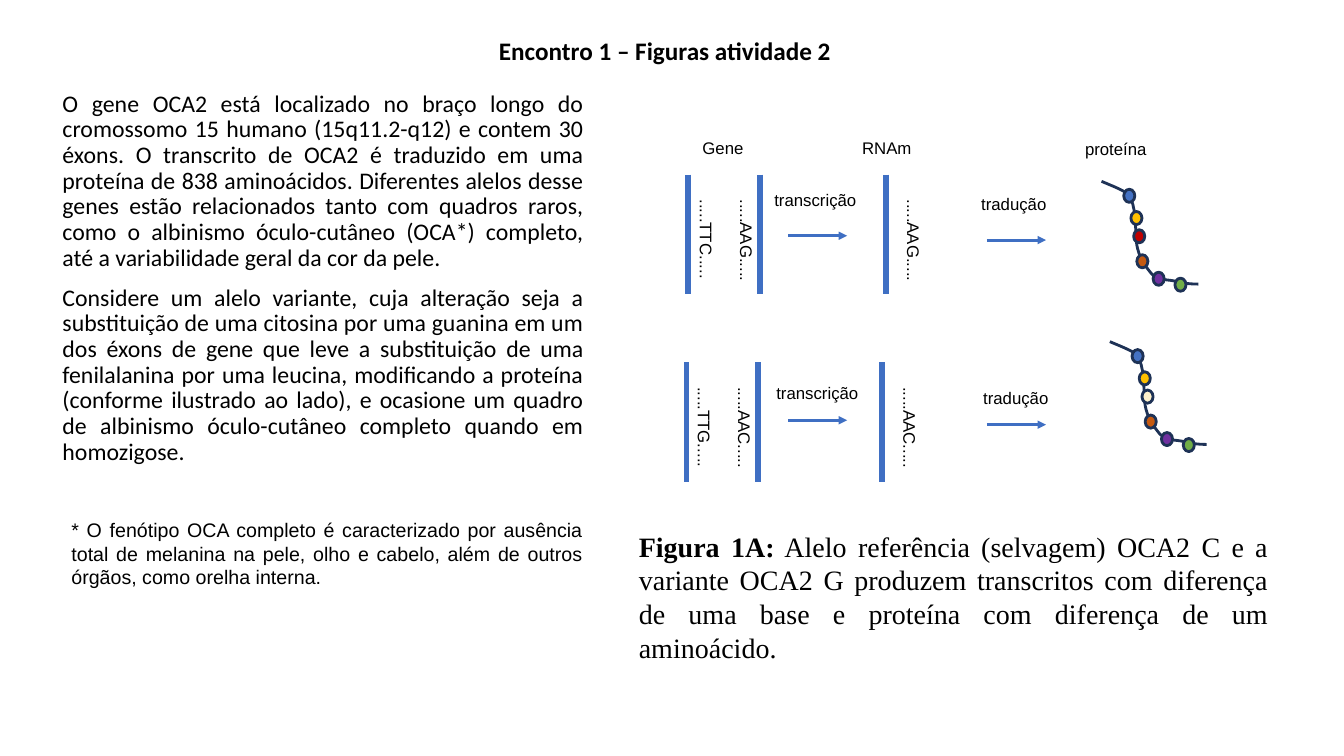
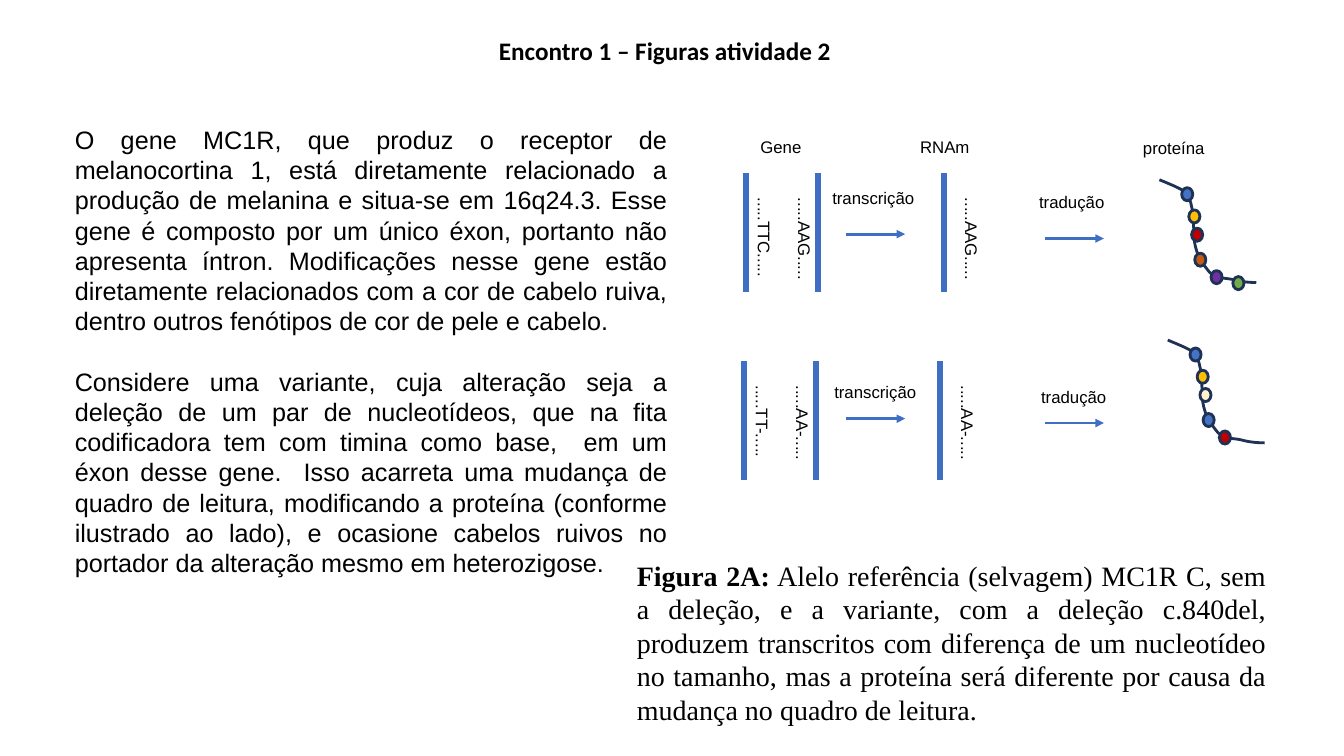
from dataclasses import dataclass

from lxml.etree import SubElement
from pptx import Presentation
from pptx.dml.color import RGBColor
from pptx.enum.shapes import MSO_CONNECTOR as Connector, MSO_SHAPE as Preset
from pptx.enum.text import MSO_ANCHOR as Anchor, MSO_AUTO_SIZE as AutoSize, PP_ALIGN as Align
from pptx.oxml.ns import qn
from pptx.util import Cm, Pt


@dataclass(frozen=True)
class Theme:
    text: str = "000000"
    strand: str = "3F6FC3"
    chain: str = "1E3256"
    blue: str = "4472C4"
    gold: str = "FFC000"
    red: str = "C00000"
    cream: str = "FFF2CC"
    orange: str = "C55A11"
    purple: str = "7030A0"
    green: str = "70AD47"
    sans: str = "Arial"
    heading: str = "Calibri"
    serif: str = "Times New Roman"
    label_size: float = 12
    note_size: float = 14
    gene_size: float = 17
    title_size: float = 18
    caption_size: float = 20
    strand_width: float = 4.25
    thin_width: float = 2


THEME = Theme()

REFERENCE_BEADS = (THEME.blue, THEME.gold, THEME.red, THEME.orange, THEME.purple, THEME.green)
OCA2_BEADS = (THEME.blue, THEME.gold, THEME.cream, THEME.orange, THEME.purple, THEME.green)
MC1R_BEADS = (THEME.blue, THEME.gold, THEME.cream, THEME.blue, THEME.red)
BEAD_SPOTS = ((0.56, 0.2), (0.74, 0.76), (0.81, 1.22), (0.89, 1.85), (1.3, 2.29), (1.85, 2.44))
CHAIN_CURVES = (
    ((0.18, 0.08), (0.33, 0.13), (0.56, 0.25)),
    ((0.66, 0.33), (0.74, 0.43), (0.79, 0.58)),
    ((0.82, 0.74), (0.84, 0.76), (0.84, 0.91)),
    ((0.89, 1.37), (0.84, 1.5), (0.94, 1.8)),
    ((1, 1.98), (1.12, 2.16), (1.27, 2.34)),
    ((1.52, 2.51), (1.55, 2.46), (1.83, 2.51)),
    ((2, 2.56), (2.2, 2.59), (2.44, 2.59)),
)
CURVE_STEPS = 8


def colour(value):
    return RGBColor.from_string(value)


def style_run(run, font, size, bold=False):
    run.font.name = font
    run.font.size = Pt(size)
    run.font.bold = bold
    run.font.color.rgb = colour(THEME.text)


def fill_text(frame, texts, font, size, align=Align.LEFT, gap=0, bold=False):
    frame.word_wrap = True
    frame.auto_size = AutoSize.NONE
    frame.vertical_anchor = Anchor.TOP
    for index, text in enumerate(texts):
        para = frame.add_paragraph() if index else frame.paragraphs[0]
        para.text = text
        para.alignment = align
        para.space_before = Pt(gap if index else 0)
        for run in para.runs:
            style_run(run, font, size, bold)


def place(shape, left, top, width, height):
    shape.left, shape.top = Cm(left), Cm(top)
    shape.width, shape.height = Cm(width), Cm(height)


def add_text(slide, area, texts, font, size, **options):
    box = slide.shapes.add_textbox(*map(Cm, area))
    fill_text(box.text_frame, texts, font, size, **options)
    return box


def add_page(deck, area, texts, font, size, gap, line_spacing=None):
    page = deck.slides.add_slide(deck.slide_layouts[1])
    title, body = page.shapes.title, page.placeholders[1]
    place(title, 12.32, 0.76, 9.98, 1.02)
    fill_text(title.text_frame, ["Encontro 1 – Figuras atividade 2"],
              THEME.heading, THEME.title_size, bold=True)
    place(body, *area)
    fill_text(body.text_frame, texts, font, size, align=Align.JUSTIFY, gap=gap)
    for para in body.text_frame.paragraphs:
        para.line_spacing = line_spacing
        properties = para._p.get_or_add_pPr()
        properties.set("marL", "0")
        properties.set("indent", "0")
        SubElement(properties, qn("a:buNone"))
    return page


def add_caption(slide, area, heading, text):
    box = add_text(slide, area, [heading], THEME.serif, THEME.caption_size,
                   align=Align.JUSTIFY, bold=True)
    run = box.text_frame.paragraphs[0].add_run()
    run.text = text
    style_run(run, THEME.serif, THEME.caption_size)


def add_label(slide, center, top, text):
    add_text(slide, (center - 1.45, top, 2.9, 0.76), [text],
             THEME.sans, THEME.label_size, align=Align.CENTER)


def add_bases(slide, center, middle, thickness, texts):
    length = 4.75
    box = add_text(slide, (center - length / 2, middle - thickness / 2, length, thickness),
                   texts, THEME.sans, THEME.label_size, gap=1.2 * THEME.label_size)
    box.rotation = 90


def add_line(slide, start, end, width, arrow=False):
    line = slide.shapes.add_connector(Connector.STRAIGHT, *map(Cm, start + end))
    line.line.color.rgb = colour(THEME.strand)
    line.line.width = Pt(width)
    if arrow:
        SubElement(line.line._get_or_add_ln(), qn("a:tailEnd"), type="triangle")
    SubElement(line._element.spPr, qn("a:effectLst"))


def add_strand(slide, x, top):
    add_line(slide, (x, top), (x, top + 3.01), THEME.strand_width)


def add_arrow(slide, x, y):
    add_line(slide, (x, y), (x + 1.49, y), THEME.thin_width, arrow=True)


def outline_chain(shape):
    shape.shadow.inherit = False
    shape.line.color.rgb = colour(THEME.chain)
    shape.line.width = Pt(THEME.thin_width)


def curve_points():
    start, points = (0, 0), []
    for first, second, end in CHAIN_CURVES:
        for step in range(1, CURVE_STEPS + 1):
            t = step / CURVE_STEPS
            weights = ((1 - t) ** 3, 3 * t * (1 - t) ** 2, 3 * t * t * (1 - t), t ** 3)
            corners = (start, first, second, end)
            points.append(tuple(sum(w * c[axis] for w, c in zip(weights, corners))
                                for axis in (0, 1)))
        start = end
    return points


def add_protein(slide, left, top, bead_colours):
    builder = slide.shapes.build_freeform(Cm(left), Cm(top))
    builder.add_line_segments([(Cm(left + x), Cm(top + y)) for x, y in curve_points()], close=False)
    chain = builder.convert_to_shape()
    chain.fill.background()
    outline_chain(chain)
    for (x, y), bead_colour in zip(BEAD_SPOTS, bead_colours):
        bead = slide.shapes.add_shape(Preset.OVAL, Cm(left + x), Cm(top + y), Cm(0.28), Cm(0.33))
        bead.fill.solid()
        bead.fill.fore_color.rgb = colour(bead_colour)
        outline_chain(bead)


def add_allele(slide, x, y, row, coding, template, beads):
    strand_left, strand_top = x - 0.05 * row, y + 4.73 * row
    rna_left = x + 4.98 - 0.1 * row
    for strand in (strand_left, strand_left + 1.8, rna_left):
        add_strand(slide, strand, strand_top)
    add_bases(slide, strand_left + 0.95, strand_top + 2.75, 1.8, [template, coding])
    add_bases(slide, rna_left + 0.7, strand_top + 2.75, 0.76, [template])
    add_label(slide, x + 3.2 + 0.05 * row, y + 0.25 + 4.88 * row, "transcrição")
    add_label(slide, x + 8.2 + 0.05 * row, y + 0.35 + 4.9 * row, "tradução")
    add_arrow(slide, x + 2.51, y + 1.54 + 4.65 * row)
    add_arrow(slide, x + 7.52, y + 1.65 + 4.65 * row)
    add_protein(slide, x + 10.41 + 0.21 * row, y + 0.17 + 4.04 * row, beads)


def add_diagram(slide, x, y, variant):
    for offset, rise, text in ((0.87, 1.05, "Gene"), (5, 1.05, "RNAm"), (10.77, 1.02, "proteína")):
        add_label(slide, x + offset, y - rise, text)
    reference = (".....TTC.....", ".....AAG.....", REFERENCE_BEADS)
    for row, allele in enumerate((reference, variant)):
        add_allele(slide, x, y, row, *allele)


def build_oca2(deck):
    page = add_page(deck, (1.32, 2.18, 13.64, 10), [
        "O gene OCA2 está localizado no braço longo do cromossomo 15 humano (15q11.2-q12) e "
        "contem 30 éxons. O transcrito de OCA2 é traduzido em uma proteína de 838 aminoácidos. "
        "Diferentes alelos desse genes estão relacionados tanto com quadros raros, como o albinismo "
        "óculo-cutâneo (OCA*) completo, até a variabilidade geral da cor da pele.",
        "Considere um alelo variante, cuja alteração seja a substituição de uma citosina por uma "
        "guanina em um dos éxons de gene que leve a substituição de uma fenilalanina por uma "
        "leucina, modificando a proteína (conforme ilustrado ao lado), e ocasione um quadro de "
        "albinismo óculo-cutâneo completo quando em homozigose.",
    ], THEME.heading, THEME.gene_size, gap=10, line_spacing=0.9)
    add_diagram(page, 17.35, 4.4, (".....TTG.....", ".....AAC.....", OCA2_BEADS))
    add_text(page, (1.55, 12.93, 13.39, 2.06), [
        "* O fenótipo OCA completo é caracterizado por ausência total de melanina na pele, olho e "
        "cabelo, além de outros órgãos, como orelha interna.",
    ], THEME.sans, THEME.note_size, align=Align.JUSTIFY)
    add_caption(page, (15.85, 13.21, 16.36, 3.8), "Figura 1A:",
                " Alelo referência (selvagem) OCA2 C e a variante OCA2 G produzem transcritos com "
                "diferença de uma base e proteína com diferença de um aminoácido.")


def build_mc1r(deck):
    page = add_page(deck, (1.63, 3, 15.44, 12.57), [
        "O gene MC1R, que produz o receptor de melanocortina 1, está diretamente relacionado a "
        "produção de melanina e situa-se em 16q24.3. Esse gene é composto por um único éxon, "
        "portanto não apresenta íntron. Modificações nesse gene estão diretamente relacionados com "
        "a cor de cabelo ruiva, dentro outros fenótipos de cor de pele e cabelo.",
        "Considere uma variante, cuja alteração seja a deleção de um par de nucleotídeos, que na "
        "fita codificadora tem com timina como base,  em um éxon desse gene.  Isso acarreta uma "
        "mudança de quadro de leitura, modificando a proteína (conforme ilustrado ao lado), e "
        "ocasione cabelos ruivos no portador da alteração mesmo em heterozigose.",
    ], THEME.sans, THEME.title_size, gap=21.6)
    add_diagram(page, 18.81, 4.36, (".....TT-.....", ".....AA-.....", MC1R_BEADS))
    add_caption(page, (15.8, 13.94, 16.36, 4.52), "Figura 2A:",
                " Alelo referência (selvagem) MC1R C, sem a deleção, e a variante, com a deleção "
                "c.840del, produzem transcritos com diferença de um nucleotídeo no tamanho, mas a "
                "proteína será diferente por causa da mudança no quadro de leitura.")


def main():
    deck = Presentation()
    deck.slide_width, deck.slide_height = Cm(33.87), Cm(19.05)
    build_oca2(deck)
    build_mc1r(deck)
    deck.save("out.pptx")


if __name__ == "__main__":
    main()
